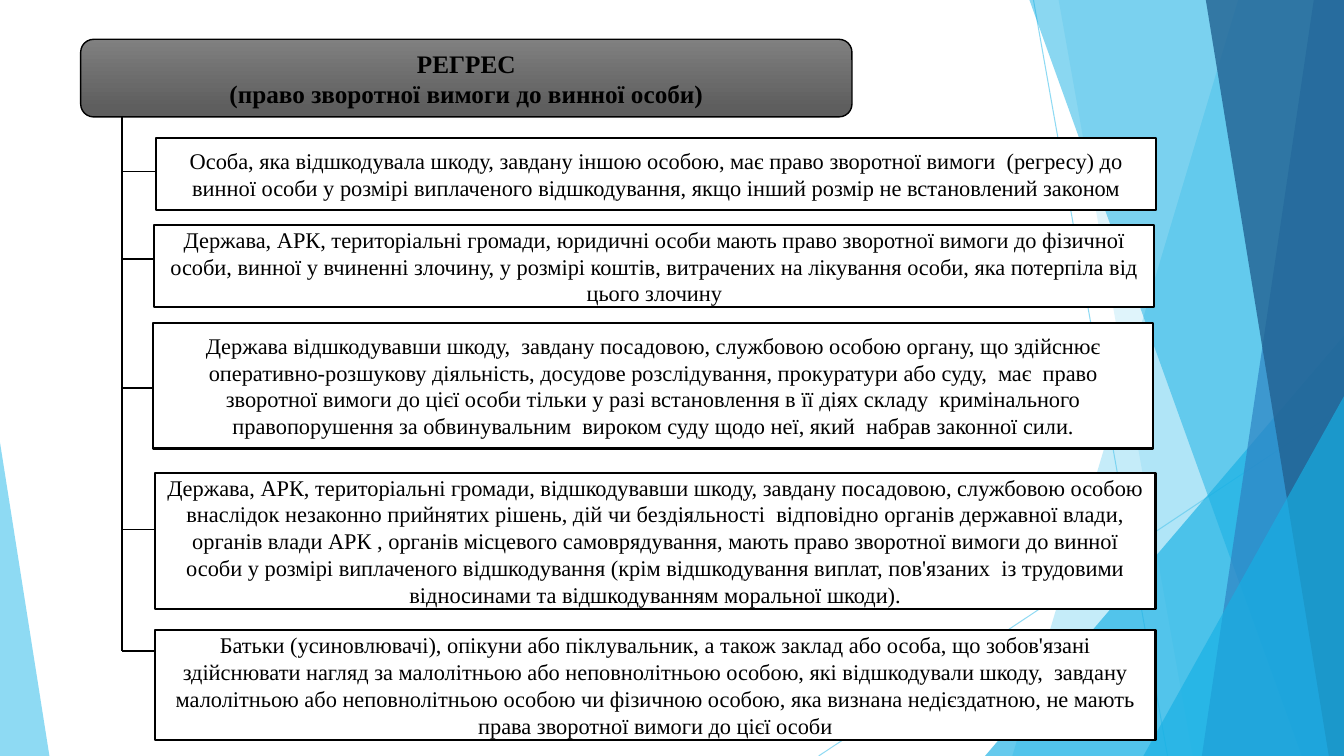
from pptx import Presentation
from pptx.dml.color import RGBColor
from pptx.enum.shapes import MSO_CONNECTOR, MSO_SHAPE
from pptx.enum.text import MSO_ANCHOR, MSO_AUTO_SIZE, PP_ALIGN
from pptx.oxml.ns import qn
from pptx.util import Inches, Pt
from lxml.etree import SubElement

BLACK = RGBColor(0x00, 0x00, 0x00)
WHITE = RGBColor(0xFF, 0xFF, 0xFF)
GREY_TOP = RGBColor(0x80, 0x80, 0x80)
GREY_BOTTOM = RGBColor(0x5E, 0x5E, 0x5E)
SKY = RGBColor(0x5F, 0xCB, 0xEF)
CYAN = RGBColor(0x17, 0xB0, 0xE4)
BLUE = RGBColor(0x2E, 0x83, 0xC3)
NAVY = RGBColor(0x22, 0x62, 0x92)

FONT = "Times New Roman"
WIDTH, HEIGHT = 13.33, 7.5
TRUNK_X, TRUNK_TOP = 1.21, 1.15
RULE_WIDTH = 9.92
HEADER_BOX = (0.8, 0.39, 7.65, 0.77)
HEADER = "РЕГРЕС\n(право зворотної вимоги до винної особи)"

# left, top, height, branch height, wording
RULES = [
    (1.55, 1.37, 0.71, 1.7,
     "Особа, яка відшкодувала шкоду, завдану іншою особою, має право зворотної "
     "вимоги  (регресу) до винної особи у розмірі виплаченого відшкодування, якщо "
     "інший розмір не встановлений законом"),
    (1.53, 2.23, 0.82, 2.57,
     "Держава, АРК, територіальні громади, юридичні особи мають право зворотної "
     "вимоги до фізичної особи, винної у вчиненні злочину, у розмірі коштів, "
     "витрачених на лікування особи, яка потерпіла від цього злочину"),
    (1.52, 3.2, 1.25, 3.85,
     "Держава відшкодувавши шкоду,  завдану посадовою, службовою особою органу, що "
     "здійснює оперативно-розшукову діяльність, досудове розслідування, прокуратури "
     "або суду,  має  право зворотної вимоги до цієї особи тільки у разі "
     "встановлення в її діях складу  кримінального правопорушення за "
     "обвинувальним  вироком суду щодо неї, який  набрав законної сили."),
    (1.54, 4.69, 1.35, 5.25,
     "Держава, АРК, територіальні громади, відшкодувавши шкоду, завдану посадовою, "
     "службовою особою внаслідок незаконно прийнятих рішень, дій чи бездіяльності  "
     "відповідно органів державної влади, органів влади АРК , органів місцевого "
     "самоврядування, мають право зворотної вимоги до винної особи у розмірі "
     "виплаченого відшкодування (крім відшкодування виплат, пов'язаних  із трудовими "
     "відносинами та відшкодуванням моральної шкоди)."),
    (1.54, 6.25, 1.09, 6.46,
     "Батьки (усиновлювачі), опікуни або піклувальник, а також заклад або особа, що "
     "зобов'язані здійснювати нагляд за малолітньою або неповнолітньою особою, які "
     "відшкодували шкоду,  завдану малолітньою або неповнолітньою особою чи фізичною "
     "особою, яка визнана недієздатною, не мають права зворотної вимоги до цієї особи"),
]


def set_opacity(owner, percent):
    for color in owner.iter(qn("a:srgbClr")):
        SubElement(color, qn("a:alpha")).set("val", str(percent * 1000))


def add_line(slide, start, end, color=BLACK, width=1):
    line = slide.shapes.add_connector(
        MSO_CONNECTOR.STRAIGHT, *(Inches(value) for value in (*start, *end)))
    line.line.color.rgb = color
    line.line.width = Pt(width)
    SubElement(line._element.spPr, qn("a:effectLst"))
    return line


def paint_glass(shape, color, opacity):
    """Give a shape a translucent fill and no outline."""
    shape.shadow.inherit = False
    shape.fill.solid()
    shape.fill.fore_color.rgb = color
    shape.line.fill.background()
    set_opacity(shape._element.spPr, opacity)


def add_band(slide, top_x, bottom_x, color, opacity):
    """Add a full-height band from a slanted left edge to the slide's right edge."""
    corners = [(WIDTH, 0), (WIDTH, HEIGHT), (bottom_x, HEIGHT)]
    outline = slide.shapes.build_freeform(Inches(top_x), 0)
    outline.add_line_segments([(Inches(x), Inches(y)) for x, y in corners], close=True)
    paint_glass(outline.convert_to_shape(), color, opacity)


def add_corner(slide, left, top, width, peak, color, opacity):
    """Add a triangle standing on the bottom edge; peak is 0 (left) to 1 (right)."""
    corner = slide.shapes.add_shape(
        MSO_SHAPE.ISOSCELES_TRIANGLE, Inches(left), Inches(top),
        Inches(width), Inches(HEIGHT - top))
    corner.adjustments[0] = peak
    paint_glass(corner, color, opacity)


def add_backdrop(slide):
    for start, end in [((10.25, 0), (11.58, HEIGHT)), ((WIDTH, 4.03), (8.12, HEIGHT))]:
        ray = add_line(slide, start, end, SKY, 0.75)
        set_opacity(ray._element.spPr, 70)
    add_band(slide, 12.28, 10.04, SKY, 36)
    add_band(slide, 10.5, 11.83, SKY, 20)
    add_corner(slide, 9.77, 3.33, 3.56, 1, CYAN, 66)
    add_band(slide, 10.21, 12.91, CYAN, 50)
    add_band(slide, 13.03, 11.92, BLUE, 70)
    add_band(slide, 11.96, 13.18, NAVY, 80)
    add_corner(slide, 11.34, 3.93, 1.99, 1, CYAN, 66)
    add_corner(slide, 0, 4.39, 0.49, 0, SKY, 70)


def write_centred(shape, text, size, bold=False):
    frame = shape.text_frame
    frame.text = text
    frame.word_wrap = True
    frame.auto_size = MSO_AUTO_SIZE.NONE
    frame.vertical_anchor = MSO_ANCHOR.MIDDLE
    for paragraph in frame.paragraphs:
        paragraph.alignment = PP_ALIGN.CENTER
        for run in paragraph.runs:
            run.font.name = FONT
            run.font.size = Pt(size)
            run.font.bold = bold
            run.font.color.rgb = BLACK


def add_outlined(slide, preset, box, line_width):
    shape = slide.shapes.add_shape(preset, *(Inches(value) for value in box))
    shape.shadow.inherit = False
    shape.line.color.rgb = BLACK
    shape.line.width = Pt(line_width)
    return shape


def add_header(slide):
    plate = add_outlined(slide, MSO_SHAPE.ROUNDED_RECTANGLE, HEADER_BOX, 1)
    plate.fill.gradient()
    plate.fill.gradient_angle = 270
    shades = [(0, GREY_TOP), (0.88, GREY_BOTTOM)]
    for stop, (position, color) in zip(plate.fill.gradient_stops, shades):
        stop.position = position
        stop.color.rgb = color

    title = slide.shapes.title
    title.left, title.top, title.width, title.height = (
        Inches(value) for value in HEADER_BOX)
    write_centred(title, HEADER, 18, bold=True)
    plate._element.addnext(title._element)  # lift the title above its plate


def add_rule(slide, left, top, height, branch_y, text):
    add_line(slide, (TRUNK_X, branch_y), (left, branch_y))
    rule = add_outlined(slide, MSO_SHAPE.RECTANGLE, (left, top, RULE_WIDTH, height), 1.5)
    rule.fill.solid()
    rule.fill.fore_color.rgb = WHITE
    write_centred(rule, text, 16)


def main():
    deck = Presentation()
    deck.slide_width, deck.slide_height = Inches(WIDTH), Inches(HEIGHT)
    slide = deck.slides.add_slide(deck.slide_layouts.get_by_name("Title Only"))
    add_backdrop(slide)
    add_header(slide)
    last_branch_y = RULES[-1][3]
    add_line(slide, (TRUNK_X, TRUNK_TOP), (TRUNK_X, last_branch_y))
    for rule in RULES:
        add_rule(slide, *rule)
    deck.save("out.pptx")


if __name__ == "__main__":
    main()
